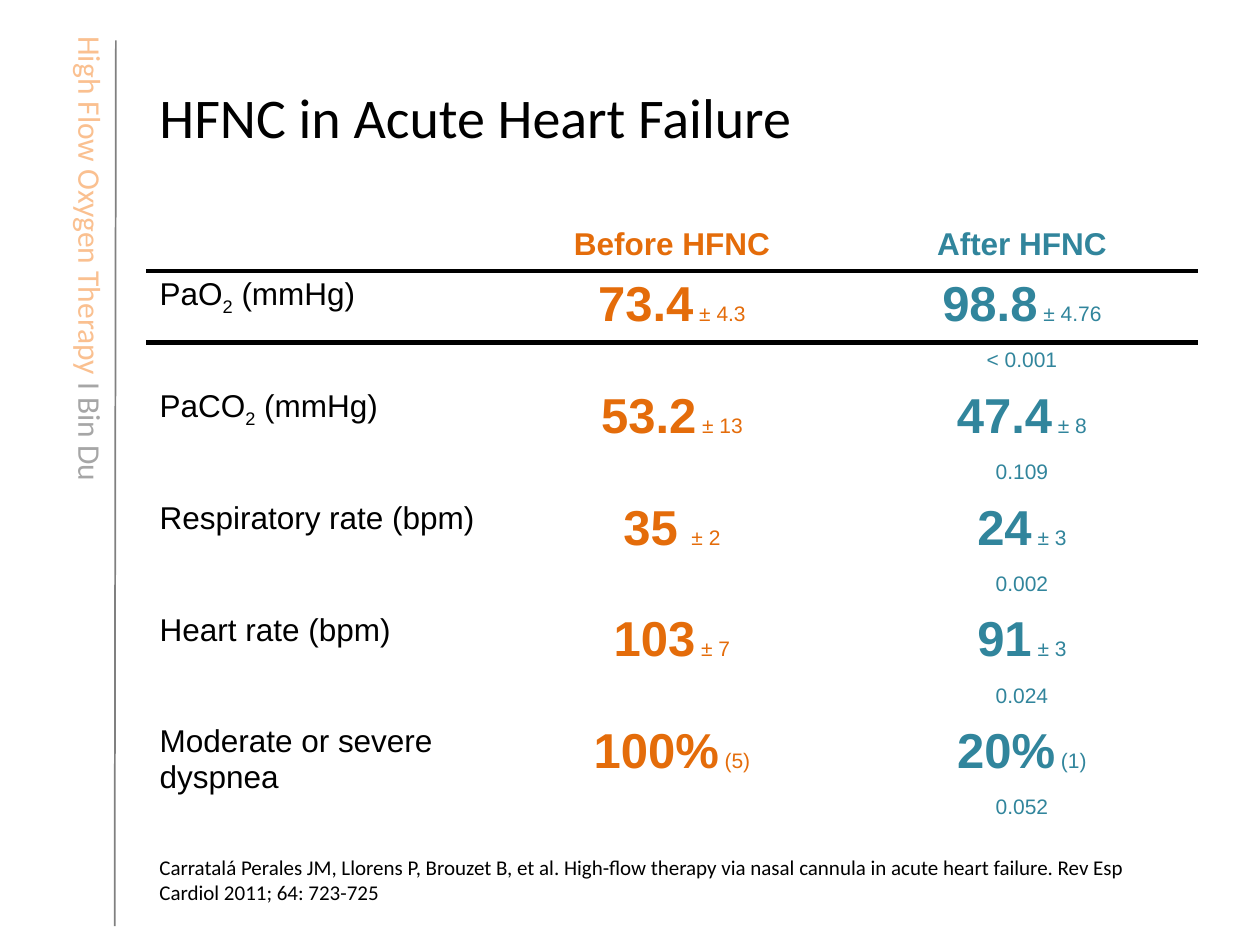
from lxml.etree import SubElement
from pptx import Presentation
from pptx.dml.color import RGBColor
from pptx.enum.shapes import MSO_CONNECTOR
from pptx.enum.text import MSO_ANCHOR, MSO_AUTO_SIZE, PP_ALIGN
from pptx.oxml import parse_xml
from pptx.oxml.ns import nsdecls, qn
from pptx.util import Inches, Pt

WIDTH, HEIGHT = Inches(10), Inches(7.5)
LEFT, CONTENT_WIDTH = WIDTH * 7 // 60, WIDTH * 5 // 6
HEADER_HEIGHT, VALUE_HEIGHT, P_HEIGHT = Inches(0.39), Inches(0.55), Inches(0.32)

BLACK = RGBColor(0x00, 0x00, 0x00)
RULE_GRAY = RGBColor(0x80, 0x80, 0x80)
AUTHOR_GRAY = RGBColor(0xA6, 0xA6, 0xA6)
PEACH = RGBColor(0xFA, 0xC0, 0x90)
ORANGE = RGBColor(0xE4, 0x6C, 0x0A)
TEAL = RGBColor(0x31, 0x85, 0x9C)

MEASURES = [
    (("PaO", "2", " (mmHg)"), ("73.4", " ± 4.3"), ("98.8", " ± 4.76"), "< 0.001"),
    (("PaCO", "2", " (mmHg)"), ("53.2", " ± 13"), ("47.4", " ± 8"), "0.109"),
    (("Respiratory rate (bpm)",), ("35 ", "± 2"), ("24", " ± 3"), "0.002"),
    (("Heart rate (bpm)",), ("103", " ± 7"), ("91", " ± 3"), "0.024"),
    (("Moderate or severe dyspnea",), ("100%", " (5)"), ("20%", " (1)"), "0.052"),
]


def style(font, name=None, size=None, color=None, bold=None):
    if name:
        font.name = name
    if size:
        font.size = Pt(size)
    if color is not None:
        font.color.rgb = color
    if bold is not None:
        font.bold = bold


def add_run(paragraph, text, **look):
    run = paragraph.add_run()
    run.text = text
    style(run.font, **look)
    return run


def add_text(slide, left, top, width, height, parts, size, wrap=True):
    box = slide.shapes.add_textbox(left, top, width, height)
    frame = box.text_frame
    frame.word_wrap = wrap
    paragraph = frame.paragraphs[0]
    style(paragraph.font, "Calibri", size)
    for text, color in parts:
        add_run(paragraph, text, color=color)
    return box


def add_sidebar(slide):
    rule = slide.shapes.add_connector(
        MSO_CONNECTOR.STRAIGHT, Inches(0.92), Inches(0.32), Inches(0.91), Inches(7.35))
    rule.line.color.rgb = RULE_GRAY
    rule.line.width = Pt(1)
    SubElement(rule._element.spPr, qn("a:effectLst"))
    topic = add_text(slide, Inches(-1.17), Inches(1.88), Inches(3.78), Inches(0.4),
                     [("High Flow Oxygen Therapy ", PEACH), ("Ι Bin Du", AUTHOR_GRAY)],
                     18, wrap=False)
    topic.text_frame.auto_size = MSO_AUTO_SIZE.SHAPE_TO_FIT_TEXT
    topic.rotation = 90


def cell_paragraph(cell, color, size=None, bold=False, centered=True):
    paragraph = cell.text_frame.paragraphs[0]
    paragraph.alignment = PP_ALIGN.CENTER if centered else PP_ALIGN.LEFT
    style(paragraph.font, "Arial", size, color, bold)
    return paragraph


def fill_label(cell, parts):
    paragraph = cell_paragraph(cell, BLACK, 18, centered=False)
    for index, text in enumerate(parts):
        run = add_run(paragraph, text)
        if index == 1:
            run._r.get_or_add_rPr().set("baseline", "-25000")


def fill_value(cell, value, color):
    paragraph = cell_paragraph(cell, color, bold=None)
    mean, spread = value
    add_run(paragraph, mean, size=28, bold=True)
    add_run(paragraph, spread, size=12, bold=False)


def add_border(cell, side):
    cell._tc.get_or_add_tcPr().insert(0, parse_xml(
        f'<a:{side} {nsdecls("a")} w="{Pt(3)}"><a:solidFill>'
        f'<a:srgbClr val="{BLACK}"/></a:solidFill></a:{side}>'))


def add_results(slide):
    row_heights = [HEADER_HEIGHT] + [VALUE_HEIGHT, P_HEIGHT] * len(MEASURES)
    table = slide.shapes.add_table(len(row_heights), 3, LEFT, Inches(1.75),
                                   CONTENT_WIDTH, sum(row_heights)).table
    table.first_row = table.horz_banding = False
    for row, height in zip(table.rows, row_heights):
        row.height = height
    for cell in table.iter_cells():
        cell.fill.background()

    for column, (heading, color) in enumerate(
            [("Before HFNC", ORANGE), ("After HFNC", TEAL)], start=1):
        add_run(cell_paragraph(table.cell(0, column), color, 18, bold=True), heading)

    for index, (label, before, after, p_value) in enumerate(MEASURES):
        row = 1 + 2 * index
        fill_label(table.cell(row, 0), label)
        fill_value(table.cell(row, 1), before, ORANGE)
        fill_value(table.cell(row, 2), after, TEAL)
        add_run(cell_paragraph(table.cell(row + 1, 2), TEAL, 12), p_value)
        for column in range(2):
            empty = table.cell(row + 1, column).text_frame.paragraphs[0]
            SubElement(empty._p, qn("a:endParaRPr")).set("sz", "1200")
    last = len(row_heights) - 1
    table.cell(last - 1, 0).merge(table.cell(last, 0))

    for column in range(3):
        add_border(table.cell(0, column), "lnB")
        add_border(table.cell(1, column), "lnT")


def main():
    presentation = Presentation()
    presentation.slide_width, presentation.slide_height = WIDTH, HEIGHT
    slide = presentation.slides.add_slide(presentation.slide_layouts[6])
    add_sidebar(slide)
    title = add_text(slide, LEFT, HEIGHT // 25, CONTENT_WIDTH, HEIGHT // 6,
                     [("HFNC in Acute Heart Failure", BLACK)], 32)
    title.text_frame.vertical_anchor = MSO_ANCHOR.MIDDLE
    add_text(slide, LEFT, Inches(6.73), CONTENT_WIDTH, Inches(0.5),
             [("Carratalá Perales JM, Llorens P, Brouzet B, et al. High-flow therapy "
               "via nasal cannula in acute heart failure. Rev Esp Cardiol 2011; "
               "64: 723-725", BLACK)], 12)
    add_results(slide)
    presentation.save("out.pptx")


if __name__ == "__main__":
    main()
